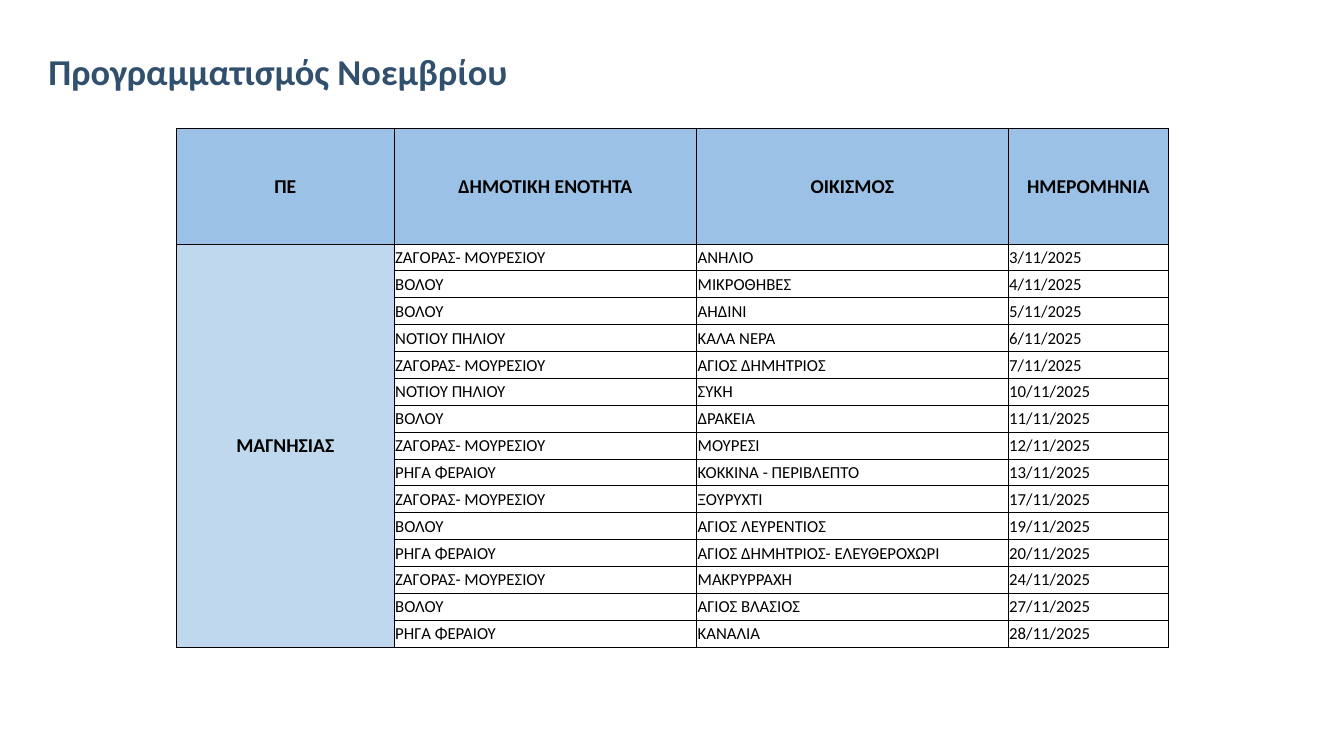
from pptx import Presentation
from pptx.dml.color import RGBColor
from pptx.enum.text import MSO_ANCHOR, PP_ALIGN
from pptx.oxml import parse_xml
from pptx.oxml.ns import nsdecls
from pptx.util import Inches, Pt

BOTTOM, MIDDLE = MSO_ANCHOR.BOTTOM, MSO_ANCHOR.MIDDLE
LEFT, CENTER = PP_ALIGN.LEFT, PP_ALIGN.CENTER
NAVY = RGBColor(0x31, 0x50, 0x6D)
BLACK = RGBColor(0x00, 0x00, 0x00)
HEADER_BLUE = RGBColor(0x9B, 0xC2, 0xE6)
REGION_BLUE = RGBColor(0xC0, 0xD8, 0xED)
FONT = "Calibri"

HEADERS = ["ΠΕ", "ΔΗΜΟΤΙΚΗ ΕΝΟΤΗΤΑ", "ΟΙΚΙΣΜΟΣ", "ΗΜΕΡΟΜΗΝΙΑ"]
REGION = "ΜΑΓΝΗΣΙΑΣ"
VISITS = [
    ("ΖΑΓΟΡΑΣ- ΜΟΥΡΕΣΙΟΥ", "ΑΝΗΛΙΟ", "3/11/2025"),
    ("ΒΟΛΟΥ", "ΜΙΚΡΟΘΗΒΕΣ", "4/11/2025"),
    ("ΒΟΛΟΥ", "ΑΗΔΙΝΙ", "5/11/2025"),
    ("ΝΟΤΙΟΥ ΠΗΛΙΟΥ", "ΚΑΛΑ ΝΕΡΑ", "6/11/2025"),
    ("ΖΑΓΟΡΑΣ- ΜΟΥΡΕΣΙΟΥ", "ΑΓΙΟΣ ΔΗΜΗΤΡΙΟΣ", "7/11/2025"),
    ("ΝΟΤΙΟΥ ΠΗΛΙΟΥ", "ΣΥΚΗ", "10/11/2025"),
    ("ΒΟΛΟΥ", "ΔΡΑΚΕΙΑ", "11/11/2025"),
    ("ΖΑΓΟΡΑΣ- ΜΟΥΡΕΣΙΟΥ", "ΜΟΥΡΕΣΙ", "12/11/2025"),
    ("ΡΗΓΑ ΦΕΡΑΙΟΥ", "ΚΟΚΚΙΝΑ - ΠΕΡΙΒΛΕΠΤΟ", "13/11/2025"),
    ("ΖΑΓΟΡΑΣ- ΜΟΥΡΕΣΙΟΥ", "ΞΟΥΡΥΧΤΙ", "17/11/2025"),
    ("ΒΟΛΟΥ", "ΑΓΙΟΣ ΛΕΥΡΕΝΤΙΟΣ", "19/11/2025"),
    ("ΡΗΓΑ ΦΕΡΑΙΟΥ", "ΑΓΙΟΣ ΔΗΜΗΤΡΙΟΣ- ΕΛΕΥΘΕΡΟΧΩΡΙ", "20/11/2025"),
    ("ΖΑΓΟΡΑΣ- ΜΟΥΡΕΣΙΟΥ", "ΜΑΚΡΥΡΡΑΧΗ", "24/11/2025"),
    ("ΒΟΛΟΥ", "ΑΓΙΟΣ ΒΛΑΣΙΟΣ", "27/11/2025"),
    ("ΡΗΓΑ ΦΕΡΑΙΟΥ", "ΚΑΝΑΛΙΑ", "28/11/2025"),
]
COL_WIDTHS = [2.16, 3, 3.09, 1.59]
HEADER_HEIGHT, BODY_HEIGHT = 1.15, 4


def style_font(font, size, color, bold):
    font.name = FONT
    font.size = Pt(size)
    font.bold = bold
    font.color.rgb = color


def add_borders(cell):
    tcPr = cell._tc.get_or_add_tcPr()
    for side in ("lnL", "lnR", "lnT", "lnB"):
        tcPr.append(parse_xml(
            f'<a:{side} {nsdecls("a")} w="{Pt(0.5)}"><a:solidFill>'
            f'<a:srgbClr val="{BLACK}"/></a:solidFill></a:{side}>'))


prs = Presentation()
prs.slide_width, prs.slide_height = Inches(13.33), Inches(7.5)
s = prs.slides.add_slide(prs.slide_layouts[5])

# Title
title = s.shapes.title
title.left, title.top = Inches(0.36), Inches(0.25)
title.width, title.height = Inches(12.4), Inches(0.73)
tf = title.text_frame
tf.text = "Προγραμματισμός Νοεμβρίου"
tf.vertical_anchor = BOTTOM
tf.margin_left, tf.margin_right = Inches(0.12), Inches(0.1)
tf.margin_top = tf.margin_bottom = Inches(0.05)
p = tf.paragraphs[0]
p.alignment = LEFT
p.line_spacing = 0.9
style_font(p.font, 26, NAVY, True)

# Table grid
rows = [HEADERS] + [(REGION if i == 0 else "", *visit) for i, visit in enumerate(VISITS)]
table = s.shapes.add_table(
    len(rows), len(HEADERS), Inches(1.75), Inches(1.27),
    Inches(sum(COL_WIDTHS)), Inches(HEADER_HEIGHT + BODY_HEIGHT)).table
table.first_row = table.horz_banding = False
for column, width in zip(table.columns, COL_WIDTHS):
    column.width = Inches(width)
for i, row in enumerate(table.rows):
    row.height = Inches(HEADER_HEIGHT if i == 0 else BODY_HEIGHT / len(VISITS))

# Table cells
for r, values in enumerate(rows):
    for c, value in enumerate(values):
        cell = table.cell(r, c)
        cell.text = value
        cell.vertical_anchor = MIDDLE
        cell.margin_left = cell.margin_top = cell.margin_right = Inches(0.01)
        cell.margin_bottom = 0
        add_borders(cell)
        heading = r == 0 or c == 0
        if heading:
            cell.fill.solid()
            cell.fill.fore_color.rgb = HEADER_BLUE if r == 0 else REGION_BLUE
        else:
            cell.fill.background()
        p = cell.text_frame.paragraphs[0]
        p.alignment = CENTER if heading else LEFT
        style_font(p.font, 14 if heading else 12, BLACK, heading)

# One region cell spans all visits
table.cell(1, 0).merge(table.cell(len(VISITS), 0))

prs.save("out.pptx")
